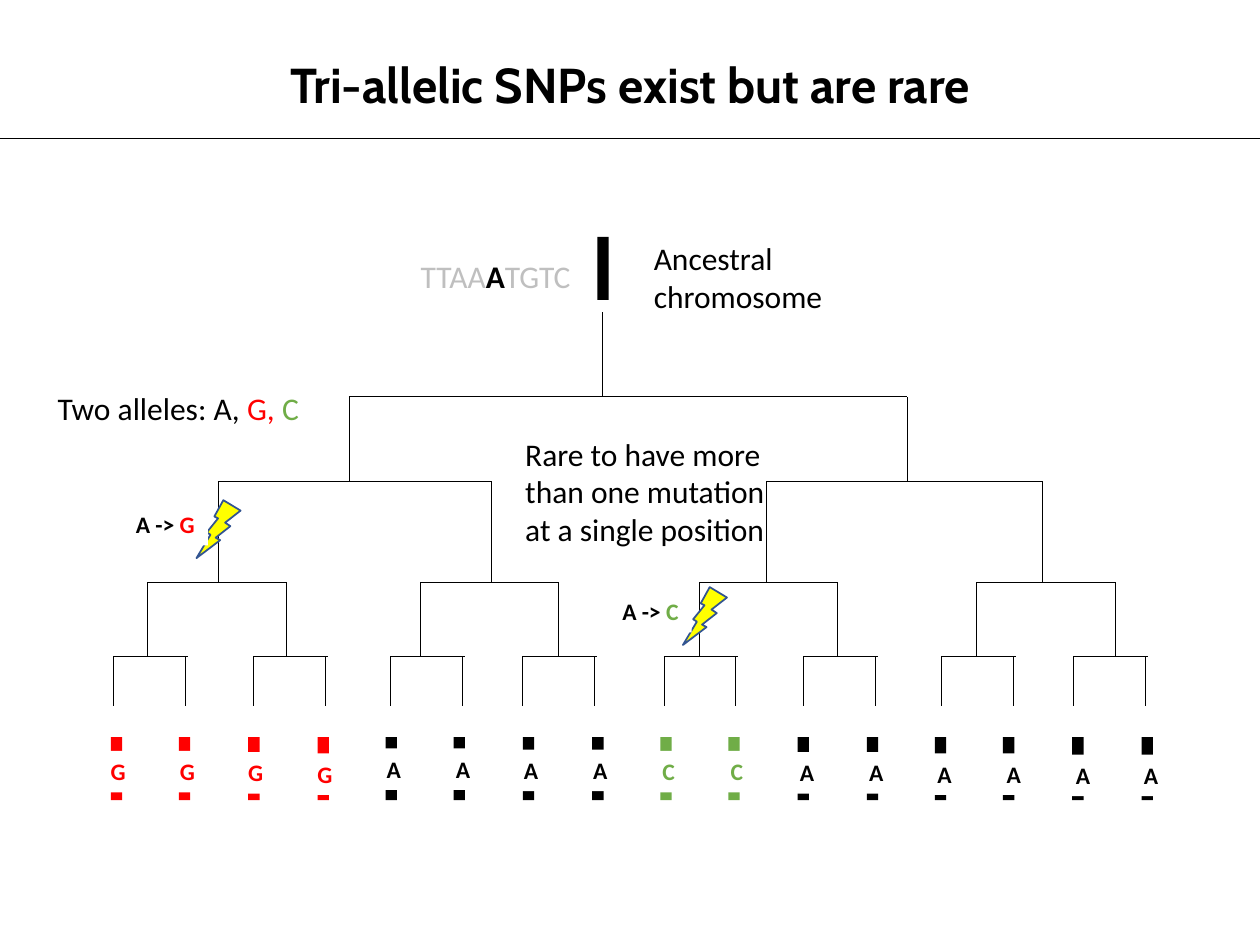
from dataclasses import dataclass

from lxml.etree import SubElement
from pptx import Presentation
from pptx.dml.color import RGBColor
from pptx.enum.shapes import MSO_CONNECTOR, MSO_SHAPE
from pptx.enum.text import MSO_AUTO_SIZE, PP_ALIGN
from pptx.oxml.ns import qn
from pptx.util import Emu, Pt


@dataclass(frozen=True)
class Theme:
    black: str = "000000"
    white: str = "FFFFFF"
    grey: str = "BFBFBF"
    red: str = "FF0000"
    green: str = "70AD47"
    yellow: str = "FFFF00"
    blue: str = "325491"
    font: str = "Calibri"
    head: str = "Cabin"
    title: float = 28
    body: float = 18
    small: float = 13.5
    thin: float = 0.5
    rule: float = 0.75


class Deck:
    scale = 9144

    def __init__(self, theme):
        self.theme = theme
        self.show = Presentation()
        self.show.slide_width = self.px(1000)
        self.show.slide_height = self.px(750)
        self.slide = self.show.slides.add_slide(self.show.slide_layouts[6])

    def px(self, num):
        return Emu(num * self.scale)

    def box(self, *area):
        return [self.px(num) for num in area]

    def paint(self, fill, color):
        fill.solid()
        fill.fore_color.rgb = RGBColor.from_string(color)

    def shape(self, kind, area, color):
        item = self.slide.shapes.add_shape(kind, *self.box(*area))
        item.shadow.inherit = False
        self.paint(item.fill, color)
        item.line.fill.background()
        return item

    def bar(self, x, y, color):
        self.shape(MSO_SHAPE.RECTANGLE, (x, y, 9, 50), color)

    def bolt(self, x, y):
        item = self.shape(MSO_SHAPE.LIGHTNING_BOLT, (x, y, 35, 46), self.theme.yellow)
        self.paint(item.line.fill, self.theme.blue)
        item.line.width = Pt(1)
        item.element.spPr.xfrm.set("flipH", "1")

    def line(self, x1, y1, x2, y2, width=None):
        item = self.slide.shapes.add_connector(
            MSO_CONNECTOR.STRAIGHT, *self.box(x1, y1, x2, y2))
        self.paint(item.line.fill, self.theme.black)
        item.line.width = Pt(width or self.theme.thin)
        SubElement(item.element.spPr, qn("a:effectLst"))

    def level(self, tips, top, low, over=0):
        for x in tips:
            self.line(x, low, x, top)
        for left, right in zip(tips[::2], tips[1::2]):
            self.line(left, top, right + over, top)

    def text(self, area, parts, size=None, font=None, bold=False):
        item = self.slide.shapes.add_textbox(*self.box(*area))
        frame = item.text_frame
        frame.word_wrap = True
        frame.auto_size = MSO_AUTO_SIZE.SHAPE_TO_FIT_TEXT
        para = frame.paragraphs[0]
        para.text = parts[0][0]
        for words, *_ in parts[1:]:
            para.add_run().text = words
        for run, (_, color, *strong) in zip(para.runs, parts):
            run.font.name = font or self.theme.font
            run.font.size = Pt(size or self.theme.body)
            run.font.bold = bold or bool(strong)
            run.font.color.rgb = RGBColor.from_string(color)
        return item

    def label(self, x, y, width, parts):
        item = self.text((x, y, width, 33), parts, self.theme.small, bold=True)
        item.text_frame.word_wrap = False
        self.paint(item.fill, self.theme.white)

    def title(self, words):
        item = self.text((0, 38, 1000, 57), [(words, self.theme.black)],
                         self.theme.title, self.theme.head, True)
        item.text_frame.paragraphs[0].alignment = PP_ALIGN.CENTER


def main():
    theme = Theme()
    deck = Deck(theme)
    tints = {"A": theme.black, "G": theme.red, "C": theme.green}
    leaves = "GGGGAAAACCAAAAAA"

    deck.text((509, 185, 212, 71), [("Ancestral chromosome", theme.black)])
    for i, base in enumerate(leaves):
        deck.bar(round(88 + 54.5 * i), 585, tints[base])

    pairs = [90, 201, 310, 415, 527, 638, 747, 852]
    tips = [x for left in pairs for x in (left, left + 57)]
    deck.level(tips, 521, 560, over=2)
    deck.level([117, 227, 334, 443, 555, 665, 775, 885], 462, 521)
    deck.level([173, 390, 608, 827], 382, 462)
    deck.level([277, 720], 315, 382)
    deck.level([478], 248, 315)

    deck.bar(474, 188, theme.black)
    deck.text((324, 199, 151, 40), [
        ("TTAA", theme.grey), ("A", theme.black, True), ("TGTC", theme.grey)])

    for i, base in enumerate(leaves):
        y = 596 + i / 2 if base == "G" else 592.2 + 0.46 * i
        width = 30 if base == "C" else 32
        deck.label(round(78 + 54.7 * i), round(y), width, [(base, tints[base])])

    for base, x, y, width in (("G", 98, 400, 67), ("C", 484, 469, 65)):
        deck.bolt(x + 58, y - 3)
        deck.label(x, y, width, [("A -> ", theme.black), (base, tints[base])])

    deck.text((36, 304, 222, 40), [
        ("Two alleles: A, ", theme.black), ("G, ", theme.red), ("C", theme.green)])
    deck.text((407, 340, 222, 101), [
        ("Rare to have more than one mutation at a single position", theme.black)])
    deck.line(0, 110, 1000, 110, theme.rule)
    deck.title("Tri-allelic SNPs exist but are rare")
    deck.show.save("out.pptx")


if __name__ == "__main__":
    main()
